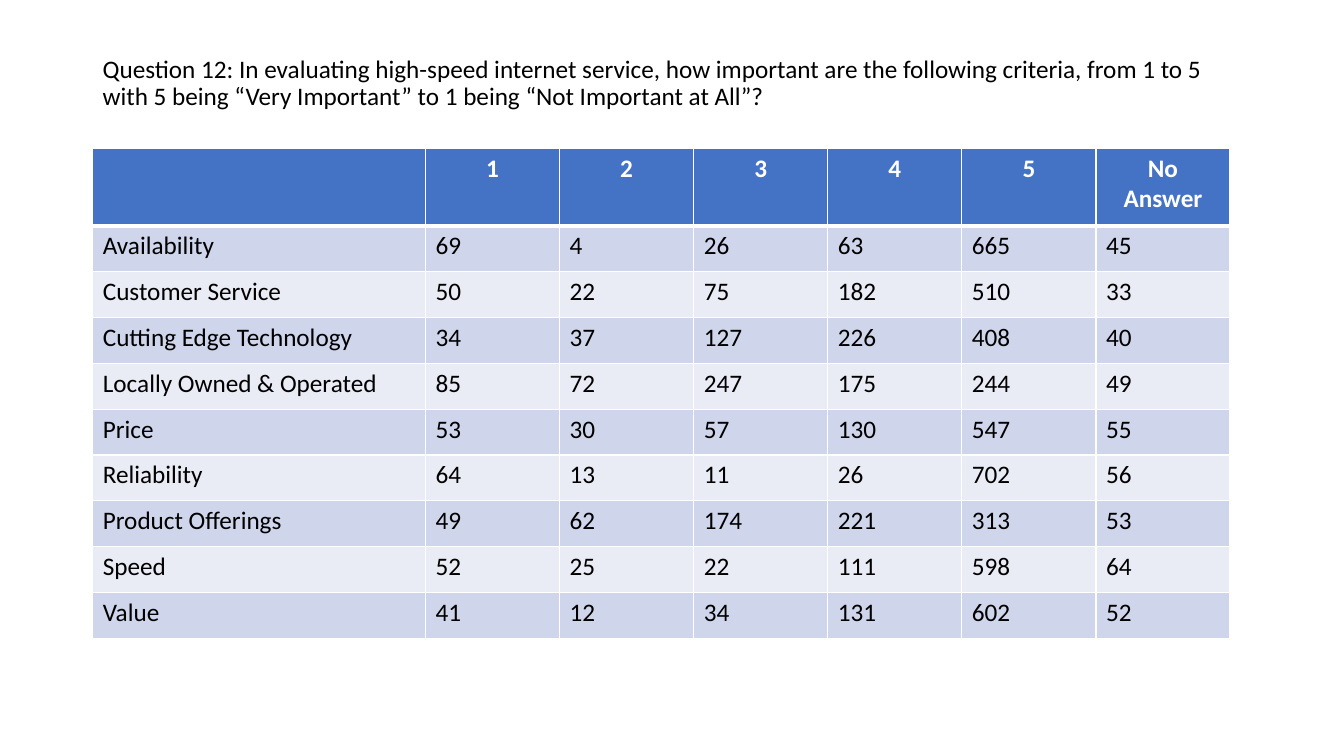
from lxml.etree import SubElement
from pptx import Presentation
from pptx.dml.color import RGBColor as Rgb
from pptx.enum.text import MSO_ANCHOR as Anchor, PP_ALIGN as Align
from pptx.oxml.ns import qn
from pptx.util import Inches, Pt

COLORS = {
    "header": "4472C4",
    "odd_row": "CFD5EA",
    "even_row": "E9EBF5",
    "rule": "FFFFFF",
    "header_text": "FFFFFF",
    "text": "000000",
}
FONT = "Calibri"
LEFT = 0.92
CRITERION_WIDTH, SCORE_WIDTH = 3.3, 1.33
HEADER_HEIGHT, ROW_HEIGHT = 0.77, 0.455

QUESTION = (
    "Question 12: In evaluating high-speed internet service, how important are "
    "the following criteria, from 1 to 5 with 5 being “Very Important” to 1 "
    "being “Not Important at All”?"
)
HEADINGS = ["", "1", "2", "3", "4", "5", "No\nAnswer"]
RATINGS = [
    ("Availability", 69, 4, 26, 63, 665, 45),
    ("Customer Service", 50, 22, 75, 182, 510, 33),
    ("Cutting Edge Technology", 34, 37, 127, 226, 408, 40),
    ("Locally Owned & Operated", 85, 72, 247, 175, 244, 49),
    ("Price", 53, 30, 57, 130, 547, 55),
    ("Reliability", 64, 13, 11, 26, 702, 56),
    ("Product Offerings", 49, 62, 174, 221, 313, 53),
    ("Speed", 52, 25, 22, 111, 598, 64),
    ("Value", 41, 12, 34, 131, 602, 52),
]


def write(frame, text, color="text", size=18, bold=False, align=Align.LEFT, spacing=None):
    frame.text = text
    for paragraph in frame.paragraphs:
        paragraph.alignment = align
        paragraph.line_spacing = spacing
        font = paragraph.font
        font.name, font.size, font.bold = FONT, Pt(size), bold
        font.color.rgb = Rgb.from_string(COLORS[color])
        for run in paragraph.runs:
            run.font.name, run.font.size, run.font.bold = FONT, Pt(size), bold
            run.font.color.rgb = Rgb.from_string(COLORS[color])


def rule_cell(cell, **widths):
    properties = cell._tc.get_or_add_tcPr()
    for side, width in widths.items():
        line = SubElement(properties, qn(f"a:ln{side}"), w=str(Pt(width)))
        fill = SubElement(line, qn("a:solidFill"))
        SubElement(fill, qn("a:srgbClr"), val=COLORS["rule"])


def fill_cell(cell, text, fill, bottom=1, top=1, **text_format):
    rule_cell(cell, L=1, R=1, T=top, B=bottom)
    cell.fill.solid()
    cell.fill.fore_color.rgb = Rgb.from_string(COLORS[fill])
    write(cell.text_frame, str(text), **text_format)


def add_question(slide):
    box = slide.shapes.add_textbox(Inches(LEFT), Inches(0.4), Inches(11.5), Inches(0.87))
    box.text_frame.word_wrap = True
    box.text_frame.vertical_anchor = Anchor.MIDDLE
    write(box.text_frame, QUESTION, spacing=0.9)


def add_ratings(slide):
    widths = [CRITERION_WIDTH] + [SCORE_WIDTH] * (len(HEADINGS) - 1)
    heights = [HEADER_HEIGHT] + [ROW_HEIGHT] * len(RATINGS)
    table = slide.shapes.add_table(
        len(heights), len(widths), Inches(LEFT), Inches(1.47),
        Inches(sum(widths)), Inches(sum(heights)),
    ).table
    for column, width in zip(table.columns, widths):
        column.width = Inches(width)
    for row, height in zip(table.rows, heights):
        row.height = Inches(height)
    for column, heading in enumerate(HEADINGS):
        fill_cell(table.cell(0, column), heading, "header", bottom=3,
                  color="header_text", bold=True, align=Align.CENTER)
    for row, rating in enumerate(RATINGS, 1):
        band = "odd_row" if row % 2 else "even_row"
        for column, entry in enumerate(rating):
            fill_cell(table.cell(row, column), entry, band, top=3 if row == 1 else 1)


def main():
    deck = Presentation()
    deck.slide_width, deck.slide_height = Inches(13.33), Inches(7.5)
    slide = deck.slides.add_slide(deck.slide_layouts[6])
    add_question(slide)
    add_ratings(slide)
    deck.save("out.pptx")


if __name__ == "__main__":
    main()
